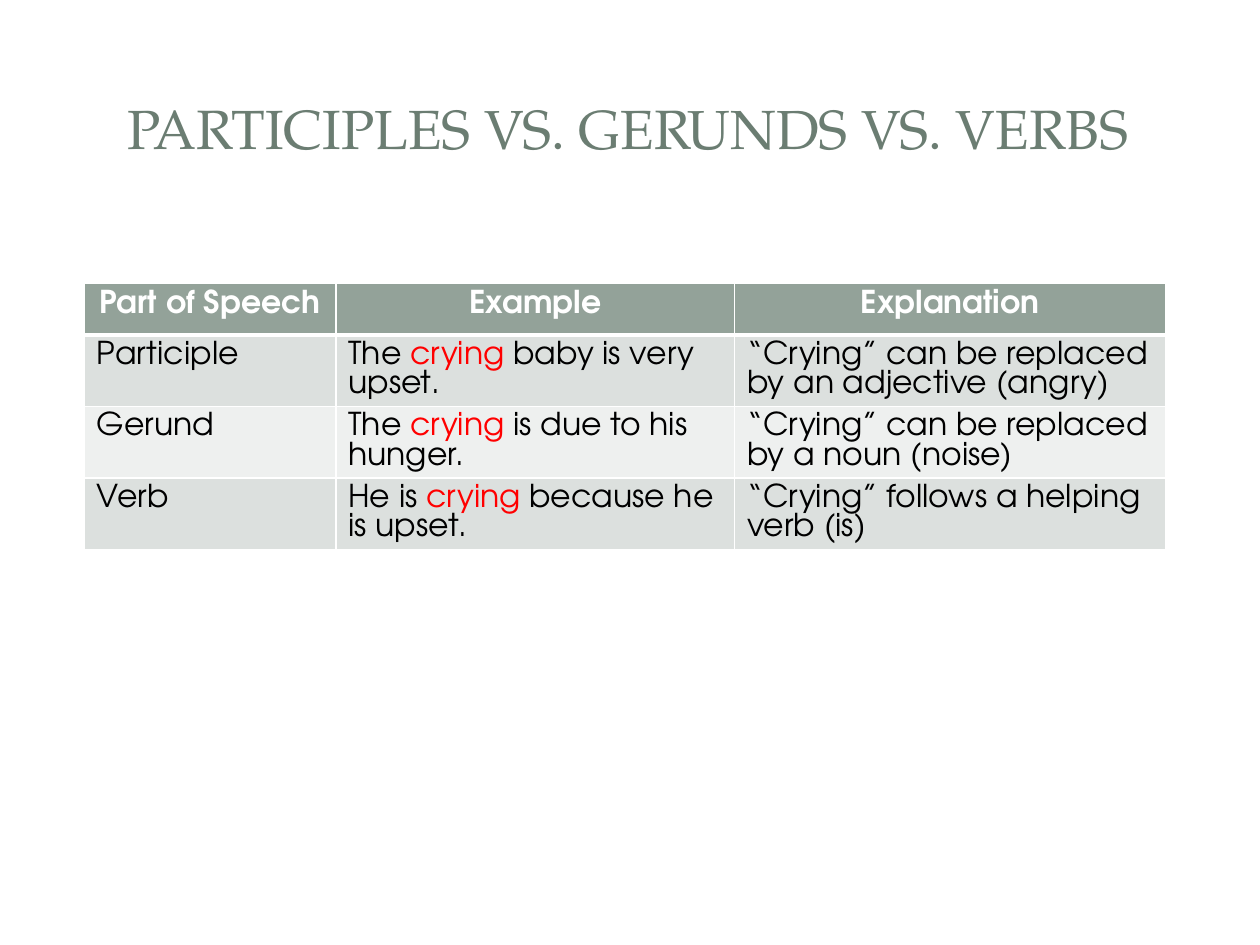
from lxml import etree
from pptx import Presentation
from pptx.dml.color import RGBColor
from pptx.enum.shapes import MSO_SHAPE
from pptx.enum.text import MSO_ANCHOR, PP_ALIGN
from pptx.oxml.ns import qn
from pptx.util import Cm, Pt

CENTER = PP_ALIGN.CENTER
LEFT = PP_ALIGN.LEFT
MIDDLE = MSO_ANCHOR.MIDDLE
RECTANGLE = MSO_SHAPE.RECTANGLE
ROUNDED_RECTANGLE = MSO_SHAPE.ROUNDED_RECTANGLE
BODY_FONT = "TeX Gyre Adventor"
TITLE_FONT = "TeX Gyre Pagella"
KEYWORD = "crying"


def color(value):
    return RGBColor.from_string(value)


def add_text(paragraph, text, font=BODY_FONT, size=18, fill="000000", bold=False, align=LEFT):
    paragraph.alignment = align
    run = paragraph.add_run()
    run.text = text
    run.font.name = font
    run.font.size = Pt(size)
    run.font.bold = bold
    run.font.color.rgb = color(fill)


presentation = Presentation()
presentation.slide_width = Cm(25.4)
presentation.slide_height = Cm(19.05)
slide = presentation.slides.add_slide(presentation.slide_layouts[6])

panels = [
    (ROUNDED_RECTANGLE, 0.25, 0.28, 24.9, 18.52, 100),
    (RECTANGLE, 0.76, 0.76, 23.88, 3.68, 83),
    (RECTANGLE, 1.04, 1.04, 23.29, 3.1, 100),
]
for kind, left, top, width, height, opacity in panels:
    panel = slide.shapes.add_shape(kind, Cm(left), Cm(top), Cm(width), Cm(height))
    panel.shadow.inherit = False
    panel.fill.solid()
    panel.fill.fore_color.rgb = color("FFFFFF")
    panel.line.fill.background()
    if kind == ROUNDED_RECTANGLE:
        panel.adjustments[0] = 0.02
    if opacity < 100:
        panel_color = panel.fill._xPr.find(qn("a:solidFill"))[0]
        etree.SubElement(panel_color, qn("a:alpha"), val=str(opacity * 1000))

title = slide.shapes.add_textbox(Cm(1.19), Cm(1.12), Cm(22.94), Cm(2.9))
title.text_frame.word_wrap = True
title.text_frame.vertical_anchor = MIDDLE
add_text(title.text_frame.paragraphs[0], "PARTICIPLES VS. GERUNDS VS. VERBS",
         font=TITLE_FONT, size=31.5, fill="6B7D72", align=CENTER)

rows = [
    ("Part of Speech", "Example", "Explanation"),
    ("Participle", "The crying baby is very upset.",
     "“Crying” can be replaced by an adjective (angry)"),
    ("Gerund", "The crying is due to his hunger.",
     "“Crying” can be replaced by a noun (noise)"),
    ("Verb", "He is crying because he is upset.",
     "“Crying” follows a helping verb (is)"),
]
row_fills = ["93A299", "DCE0DE", "EEF0EF", "DCE0DE"]
column_widths = [5.07, 8.04, 8.69]
row_height = 1.03

table = slide.shapes.add_table(len(rows), len(column_widths), Cm(1.7), Cm(5.72),
                               Cm(sum(column_widths)), Cm(row_height * len(rows))).table
for column, width in zip(table.columns, column_widths):
    column.width = Cm(width)

for row_index, texts in enumerate(rows):
    table.rows[row_index].height = Cm(row_height)
    for column_index, text in enumerate(texts):
        cell = table.cell(row_index, column_index)
        properties = cell._tc.get_or_add_tcPr()
        for side in ("L", "R", "T", "B"):
            under_header = (row_index, side) in ((0, "B"), (1, "T"))
            border = etree.SubElement(properties, qn(f"a:ln{side}"),
                                      w=str(Pt(3 if under_header else 1)))
            border_fill = etree.SubElement(border, qn("a:solidFill"))
            etree.SubElement(border_fill, qn("a:srgbClr"), val="FFFFFF")
        cell.fill.solid()
        cell.fill.fore_color.rgb = color(row_fills[row_index])

        paragraph = cell.text_frame.paragraphs[0]
        paragraph.line_spacing = Pt(16.8)
        if row_index == 0:
            add_text(paragraph, text, fill="FFFFFF", bold=True, align=CENTER)
            continue
        before, keyword, after = text.partition(KEYWORD)
        add_text(paragraph, before)
        if keyword:
            add_text(paragraph, keyword, fill="FF0000")
            add_text(paragraph, after)

presentation.save("out.pptx")
